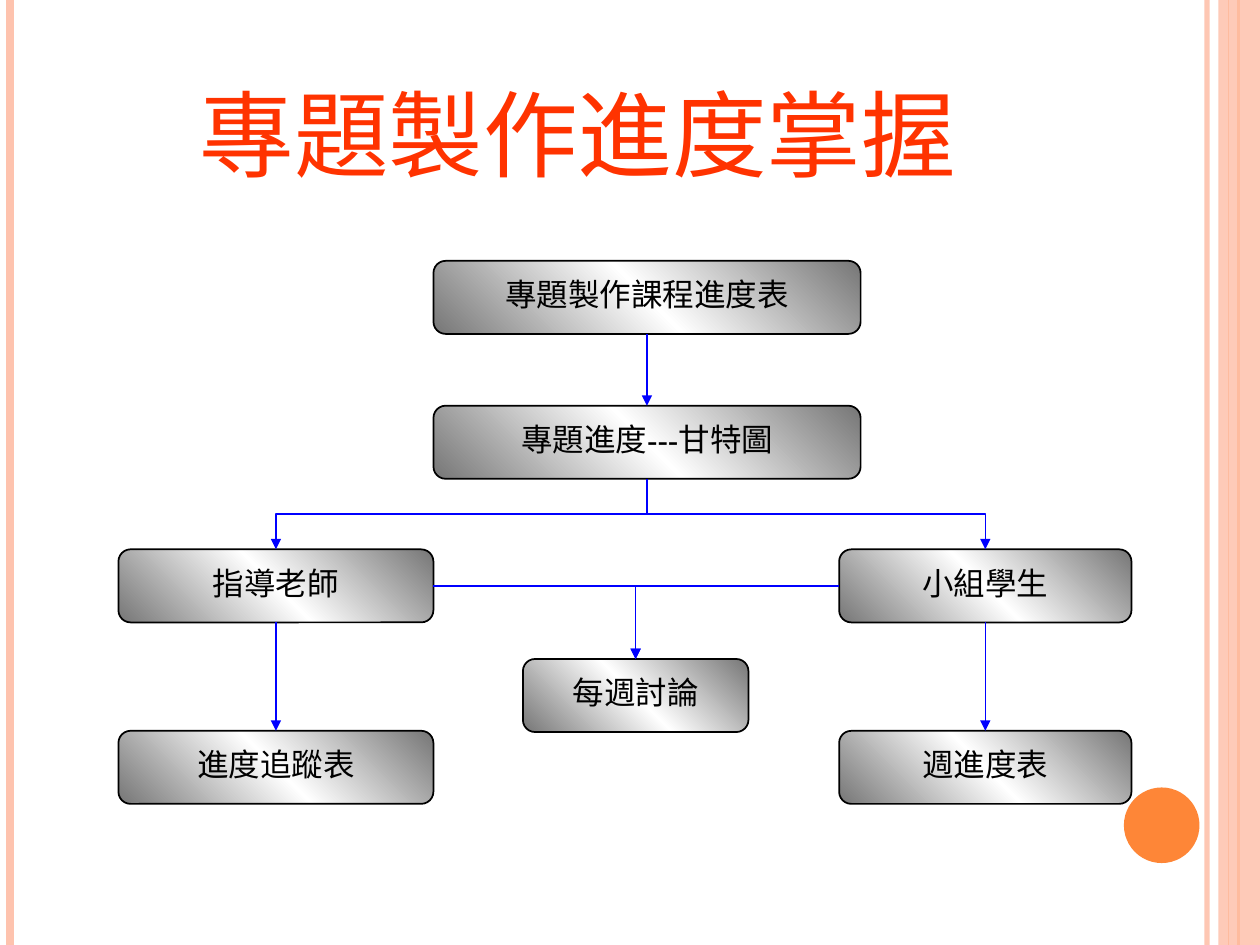
from lxml import etree
from pptx import Presentation
from pptx import util as u
from pptx.dml.color import RGBColor
from pptx.enum import shapes, text
from pptx.oxml.ns import qn

TITLE = "專題製作進度掌握"
CJK, LATIN = "Noto Sans CJK SC", "TeX Gyre Schola"
ORANGE, PEACH, BLUE = "FE8637", "FEC3AE", "0000FF"
BOX_HEIGHT = 0.58

STRIPES = [(9.58, PEACH, 3, 93), (0.08, PEACH, 4.5, 100),
           (9.83, ORANGE, 1.5, 100), (9.75, ORANGE, 0.75, 100)]
DECOR = [("RECTANGLE", (9.67, 0, 0.33, 7.5), PEACH, 87),
         ("OVAL", (8.92, 6.25, 0.6, 0.6), ORANGE, 100)]
COLUMNS = {"main": (3.44, 3.39), "teacher": (0.94, 2.5),
           "student": (6.66, 2.32), "meeting": (4.15, 1.79)}
BOXES = {
    "schedule": ("專題製作課程進度表", "main", 2.07),
    "gantt": ("專題進度---甘特圖", "main", 3.22),
    "teacher": ("指導老師", "teacher", 4.36),
    "student": ("小組學生", "student", 4.36),
    "meeting": ("每週討論", "meeting", 5.23),
    "tracking": ("進度追蹤表", "teacher", 5.8),
    "weekly": ("週進度表", "student", 5.8),
}
STRAIGHT = [("schedule", "gantt"), ("teacher", "tracking"), ("student", "weekly")]
BRANCHES = [("gantt", "teacher"), ("gantt", "student")]
MERGES = [("student", "meeting"), ("teacher", "meeting")]


def color(value):
    return RGBColor.from_string(value)


def child(parent, tag, **values):
    node = etree.SubElement(parent, qn(tag))
    for name, value in values.items():
        node.set(name, str(value))
    return node


def fade(fill_parent, percent):
    if percent < 100:
        node = next(fill_parent.iter(qn("a:srgbClr")))
        child(node, "a:alpha", val=percent * 1000)


def write(frame, content, size, font, tint, spacing=None):
    frame.text = content
    para = frame.paragraphs[0]
    para.alignment = text.PP_ALIGN.CENTER
    if spacing:
        para.line_spacing = spacing
    span = para.runs[0]
    for name, value in {"size": u.Pt(size), "name": font, "bold": False}.items():
        setattr(span.font, name, value)
    span.font.color.rgb = color(tint)
    child(span.font._element, "a:ea", typeface=CJK)


def connect(page, kind, start, end, tint, width, arrow=False):
    line = page.shapes.add_connector(kind, *map(u.Inches, (*start, *end)))
    line.line.color.rgb = color(tint)
    line.line.width = u.Pt(width)
    if arrow:
        child(line.line._get_or_add_ln(), "a:tailEnd", type="triangle")
    child(line._element.spPr, "a:effectLst")
    return line


def arrow(page, start, end, kind=shapes.MSO_CONNECTOR.STRAIGHT):
    return connect(page, kind, start, end, BLUE, 0.75, True)


def branch(page, start, end):
    center_x, center_y = (start[0] + end[0]) / 2, (start[1] + end[1]) / 2
    half_width, half_height = abs(end[0] - start[0]) / 2, (end[1] - start[1]) / 2
    side = 1 if end[0] < start[0] else -1
    line = arrow(page, (center_x - side * half_height, center_y - half_width),
                 (center_x + side * half_height, center_y + half_width),
                 shapes.MSO_CONNECTOR.ELBOW)
    line._element.spPr.find(qn("a:xfrm")).set("rot", str((90 if side == 1 else 270) * 60000))


def merge(page, start, end):
    line = arrow(page, start, end, shapes.MSO_CONNECTOR.ELBOW)
    line._element.spPr.find(qn("a:prstGeom")).set("prst", "bentConnector2")


def shape(page, kind, place):
    item = page.shapes.add_shape(getattr(shapes.MSO_SHAPE, kind), *map(u.Inches, place))
    item.shadow.inherit = False
    return item


def shade(item):
    item.fill.gradient()
    item.fill.gradient_angle = 45
    stops = next(item._element.spPr.iter(qn("a:gsLst")))
    for stop in list(stops):
        stops.remove(stop)
    for position, tint in [(0, "767676"), (50, "FFFFFF"), (100, "767676")]:
        child(child(stops, "a:gs", pos=position * 1000), "a:srgbClr", val=tint)


def place(name):
    _, column, top = BOXES[name]
    left, width = COLUMNS[column]
    return left, top, width, BOX_HEIGHT


def anchor(name, across, down):
    left, top, width, height = place(name)
    return left + width * across, top + height * down


def main():
    deck = Presentation()
    deck.slide_width, deck.slide_height = u.Inches(10), u.Inches(7.5)
    page = deck.slides.add_slide(deck.slide_layouts[5])

    for left, tint, width, opacity in STRIPES:
        line = connect(page, shapes.MSO_CONNECTOR.STRAIGHT, (left, 0), (left, 7.5), tint, width)
        fade(line._element.spPr, opacity)
    for kind, spot, tint, opacity in DECOR:
        item = shape(page, kind, spot)
        item.fill.solid()
        item.fill.fore_color.rgb = color(tint)
        item.line.fill.background()
        fade(item._element.spPr, opacity)

    title = page.shapes.title
    for name, value in zip(("left", "top", "width", "height"), (0.5, 0.3, 8.17, 1.25)):
        setattr(title, name, u.Inches(value))
    title.text_frame.vertical_anchor = text.MSO_ANCHOR.BOTTOM
    write(title.text_frame, TITLE, 54, CJK, "FF3300")

    for name, (label, _, _) in BOXES.items():
        box = shape(page, "FLOWCHART_ALTERNATE_PROCESS", place(name))
        shade(box)
        box.line.color.rgb = color("000000")
        box.line.width = u.Pt(1)
        box.text_frame.vertical_anchor = text.MSO_ANCHOR.TOP
        write(box.text_frame, label, 18, LATIN, "000000", 1.12)

    for draw, pairs in ((arrow, STRAIGHT), (branch, BRANCHES)):
        for source, target in pairs:
            draw(page, anchor(source, 0.5, 1), anchor(target, 0.5, 0))
    for source, target in MERGES:
        edge = 0 if source == "student" else 1
        merge(page, anchor(source, edge, 0.5), anchor(target, 0.5, 0))

    deck.save("out.pptx")


if __name__ == "__main__":
    main()
